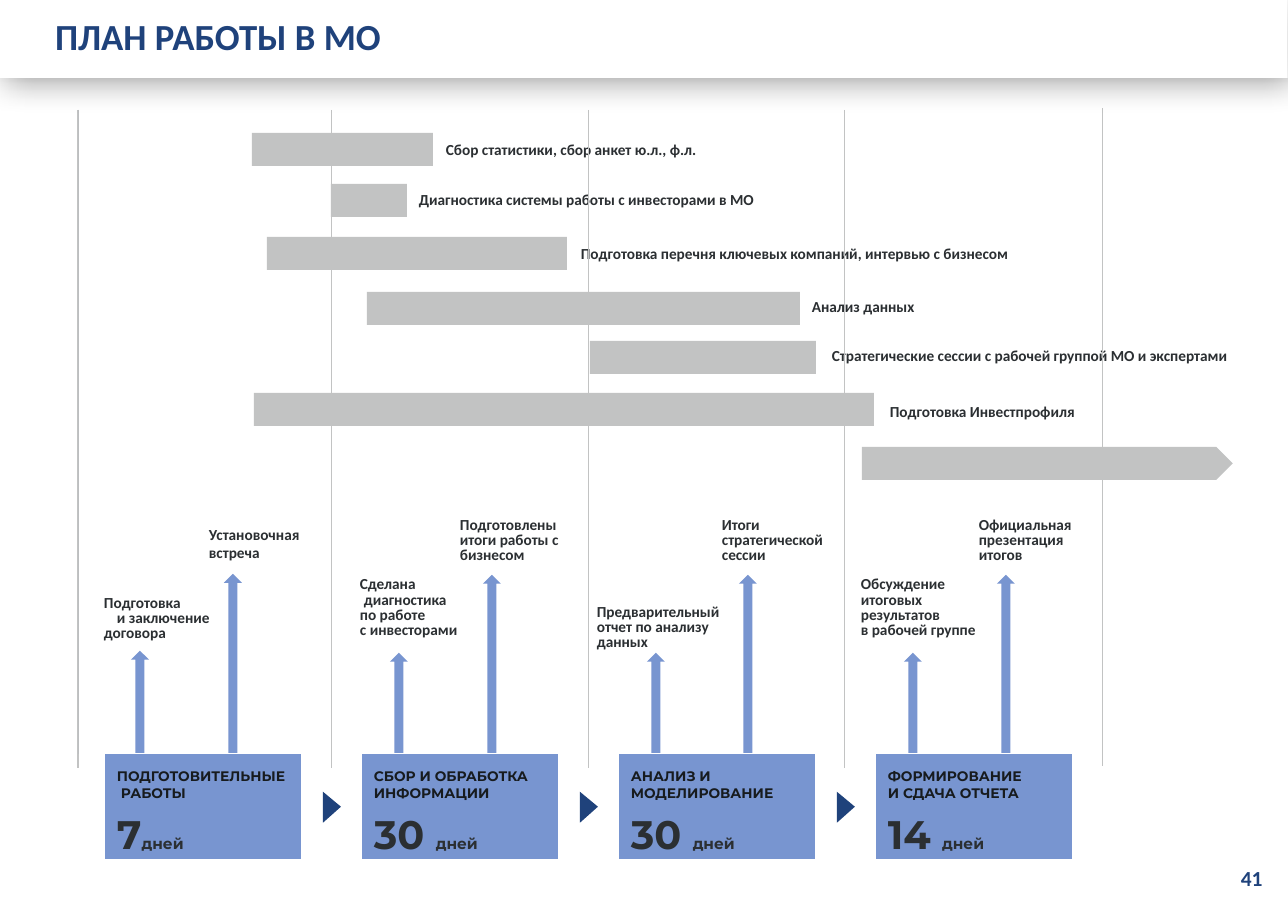
from lxml import etree
from pptx import Presentation
from pptx import util as u
from pptx.dml import color
from pptx.enum import shapes, text
from pptx.oxml import ns

SCALE = 8298
COLORS = {"navy": "1F427B", "blue": "7895D0", "gray": "C2C3C3", "thin": "BCBEC0",
          "ink": "2B2F32", "black": "171B1E", "white": "FFFFFF"}
TITLE = "ПЛАН РАБОТЫ В МО"
PAGE_NUMBER = "41"
BAR_HEIGHT = 33
TASKS = [
    (252, 133, 181, 446, 140, "Сбор статистики, сбор анкет ю.л., ф.л."),
    (331, 184, 76, 419, 190, "Диагностика системы работы с инвесторами в МО"),
    (267, 237, 300, 581, 244, "Подготовка перечня ключевых компаний, интервью с бизнесом"),
    (367, 292, 433, 812, 297, "Анализ данных"),
    (590, 341, 226, 832, 346, "Стратегические сессии с рабочей группой МО и экспертами"),
    (254, 393, 620, 890, 402, "Подготовка Инвестпрофиля"),
]
FINAL_TASK = (862, 447, 371)
GRID_LINES = [
    (78, 110, 768, "gray", 0.75), (332, 110, 768, "gray", 0.75),
    (589, 110, 768, "gray", 0.75), (845, 110, 768, "gray", 0.75),
    (1103, 108, 766, "gray", 0.75), (78, 110, 754, "thin", 0.5),
]
MILESTONES = [
    (131, 651, 104, 596, 10, ["Подготовка", "и заключение", "договора"]),
    (224, 574, 209, 525, None, ["Установочная", "встреча"]),
    (390, 653, 360, 578, 10, ["Сделана", "диагностика", "по работе", "с инвесторами"]),
    (483, 575, 460, 518, 10, ["Подготовлены", "итоги работы с", "бизнесом"]),
    (647, 653, 597, 605, 10, ["Предварительный", "отчет по анализу", "данных"]),
    (739, 575, 722, 518, 10, ["Итоги", "стратегической", "сессии"]),
    (904, 653, 861, 578, 10, ["Обсуждение", "итоговых", "результатов", "в рабочей группе"]),
    (997, 575, 979, 518, 10, ["Официальная", "презентация", "итогов"]),
]
INDENTS = {"и заключение": 13, "диагностика": 4, "РАБОТЫ": 4}
STAGES = [
    (["ПОДГОТОВИТЕЛЬНЫЕ", "РАБОТЫ"], "7"),
    (["СБОР И ОБРАБОТКА", "ИНФОРМАЦИИ"], "30 "),
    (["АНАЛИЗ И", "МОДЕЛИРОВАНИЕ"], "30 "),
    (["ФОРМИРОВАНИЕ", "И СДАЧА ОТЧЕТА"], "14 "),
]
UNIT = "дней"
STAGE_LEFT, STAGE_TOP, STAGE_WIDTH, STAGE_HEIGHT, STAGE_STEP = 104, 754, 198, 106, 257


def px(*values):
    return [u.Emu(value * SCALE) for value in values]


def rgb(name):
    return color.RGBColor.from_string(COLORS[name])


def style(font, size, tone, face="Calibri"):
    font.name, font.size, font.bold = face, u.Pt(size), True
    font.color.rgb = rgb(tone)


def write(frame, lines, size, tone, face="Calibri", spacing=None):
    for index, line in enumerate(lines):
        para = frame.add_paragraph() if index else frame.paragraphs[0]
        para.text = line
        para.alignment = text.PP_ALIGN.LEFT
        para.line_spacing = spacing
        style(para.font, size, tone, face)
        if line in INDENTS:
            para._p.get_or_add_pPr().set("marL", str(INDENTS[line] * SCALE))


def clear_margins(frame):
    frame.margin_left = frame.margin_right = frame.margin_top = frame.margin_bottom = 0
    frame.word_wrap = True
    frame.auto_size = text.MSO_AUTO_SIZE.NONE
    frame.vertical_anchor = text.MSO_ANCHOR.TOP


def add_label(page, left, top, width, lines, size=10, tone="ink", spacing=None):
    box = page.shapes.add_textbox(*px(left, top, width, 20 * len(lines)))
    clear_margins(box.text_frame)
    write(box.text_frame, lines, size, tone, spacing=spacing)


def paint(shape, tone):
    shape.shadow.inherit = False
    shape.fill.solid()
    shape.fill.fore_color.rgb = rgb(tone)
    shape.line.fill.background()
    return shape


def add_block(page, kind, left, top, width, height, tone):
    return paint(page.shapes.add_shape(kind, *px(left, top, width, height)), tone)


def add_stage(page, left, heading, days):
    frame = page.shapes.add_table(1, 1, *px(left, STAGE_TOP, STAGE_WIDTH, STAGE_HEIGHT))
    table = frame.table
    table.first_row = table.horz_banding = False
    cell = table.cell(0, 0)
    cell.fill.solid()
    cell.fill.fore_color.rgb = rgb("blue")
    cell.margin_left, cell.margin_top = px(13, 14)
    cell.margin_right = cell.margin_bottom = 0
    write(cell.text_frame, heading, 9, "black", "Montserrat", 1.02)
    para = cell.text_frame.add_paragraph()
    para.space_before, para.line_spacing = u.Pt(13), u.Pt(24.6)
    for words, size in ((days, 26), (UNIT, 10)):
        span = para.add_run()
        span.text = words
        style(span.font, size, "ink", "Montserrat")


def add_header(page):
    header = add_block(page, shapes.MSO_SHAPE.RECTANGLE, 0, 0, 1288, 78, "white")
    effects = header._element.spPr.find(ns.qn("a:effectLst"))
    shadow = etree.SubElement(effects, ns.qn("a:outerShdw"), blurRad=str(u.Pt(22)),
                              dist=str(u.Pt(3)), dir="2700000", algn="tl", rotWithShape="0")
    tint = etree.SubElement(shadow, ns.qn("a:srgbClr"), val="000000")
    etree.SubElement(tint, ns.qn("a:alpha"), val="40000")
    title = page.shapes.title
    title.left, title.top, title.width, title.height = px(55, 14, 1200, 46)
    clear_margins(title.text_frame)
    write(title.text_frame, [TITLE], 24, "navy")
    page.shapes._spTree.append(title._element)


def main():
    deck = Presentation()
    deck.slide_width, deck.slide_height = u.Inches(11.69), u.Inches(8.27)
    page = deck.slides.add_slide(deck.slide_layouts[5])

    for left, top, width, label_left, label_top, label in TASKS:
        add_block(page, shapes.MSO_SHAPE.RECTANGLE, left, top, width, BAR_HEIGHT, "gray")
        add_label(page, label_left, label_top, 450, [label])
    add_block(page, shapes.MSO_SHAPE.PENTAGON, *FINAL_TASK, BAR_HEIGHT, "gray")

    for left, top, bottom, tone, weight in GRID_LINES:
        line = page.shapes.add_connector(shapes.MSO_CONNECTOR.STRAIGHT,
                                         *px(left, top, left, bottom))
        line.line.color.rgb, line.line.width = rgb(tone), u.Pt(weight)
        etree.SubElement(line._element.spPr, ns.qn("a:effectLst"))

    for left, top, label_left, label_top, spacing, lines in MILESTONES:
        add_block(page, shapes.MSO_SHAPE.UP_ARROW, left, top, 18, 767 - top, "blue")
        add_label(page, label_left, label_top, 130, lines,
                  spacing=u.Pt(spacing) if spacing else None)

    for index, (heading, days) in enumerate(STAGES):
        left = STAGE_LEFT + index * STAGE_STEP
        add_stage(page, left, heading, days)
        if index:
            tip = left - 20
            builder = page.shapes.build_freeform(tip - 18, 792, SCALE)
            builder.add_line_segments([(tip - 18, 823), (tip, 807)], close=True)
            paint(builder.convert_to_shape(), "navy")

    add_header(page)
    add_label(page, 1241, 865, 40, [PAGE_NUMBER], 14, "navy")
    deck.save("out.pptx")


if __name__ == "__main__":
    main()
